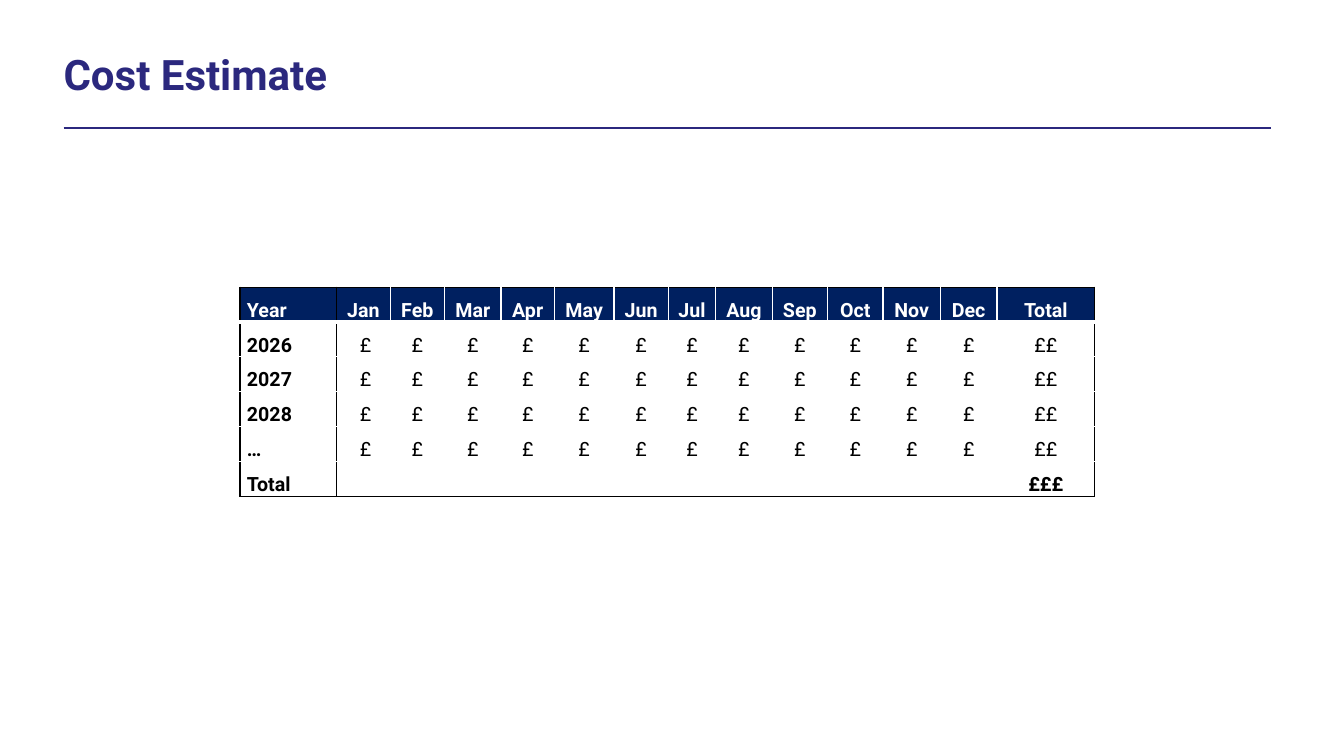
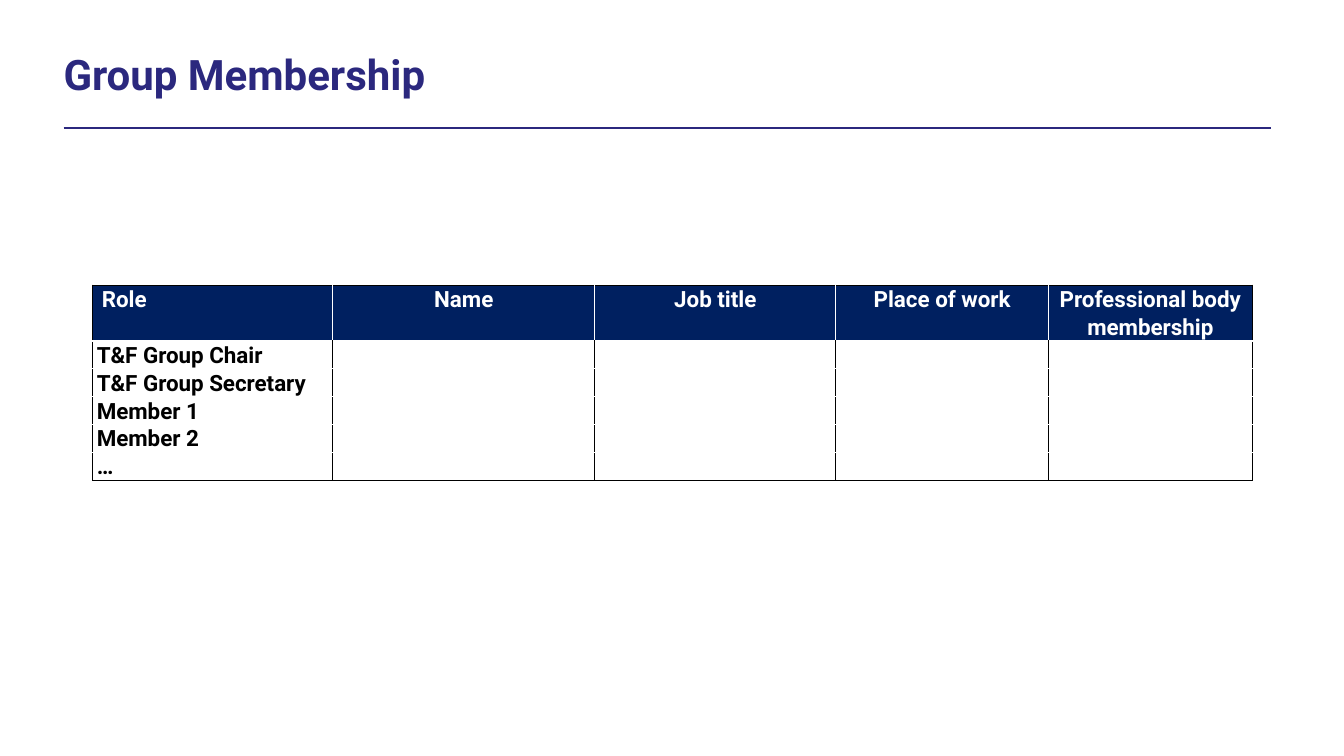
from lxml.etree import SubElement
from pptx import Presentation
from pptx.dml.color import RGBColor
from pptx.enum.shapes import MSO_CONNECTOR
from pptx.enum.text import MSO_ANCHOR as ANCHOR, MSO_AUTO_SIZE, PP_ALIGN as ALIGN
from pptx.oxml.ns import qn
from pptx.util import Pt

PX = 9144  # EMU in one px, 100 px to the inch
FONT = "Roboto"
PURPLE, NAVY, WHITE, BLACK = "2B287E", "002060", "FFFFFF", "000000"
LEFT, WIDTH = 63, 1198


def color(value):
    return RGBColor.from_string(value)


def write(frame, text, size, ink=BLACK, bold=True, align=ALIGN.LEFT, spacing=1.0, after=0):
    para = frame.paragraphs[0]
    para.alignment = align
    para.line_spacing = spacing
    para.space_after = Pt(after)
    if not text:
        # An empty cell still needs a size, or its row grows
        SubElement(para._p, qn("a:endParaRPr"), sz=str(size * 100))
        return
    span = para.add_run()
    span.text = text
    span.font.name = FONT
    span.font.size = Pt(size)
    span.font.bold = bold
    span.font.color.rgb = color(ink)


# Content: dark_edges are the column edges drawn black, in header and body
months = "Jan Feb Mar Apr May Jun Jul Aug Sep Oct Nov Dec".split()
cost_rows = [["Year", *months, "Total"]]
cost_rows += [[year] + ["£"] * 12 + ["££"] for year in ("2026", "2027", "2028", "…")]
cost_rows += [["Total"] + [""] * 12 + ["£££"]]
roles = ["T&F Group Chair", "T&F Group Secretary", "Member 1", "Member 2", "…"]
member_rows = [["Role", "Name", "Job title", "Place of work", "Professional body membership"]]
member_rows += [[role] + [""] * 4 for role in roles]

pages = [
    dict(title="Cost Estimate", rows=cost_rows, left=238, top=285,
         widths=[96, 53, 54, 56, 53, 59, 54, 47, 56, 55, 55, 57, 56, 97],
         heights=[34] * 6, size=14, spacing=1.5, after=8, margin=7,
         indents={(row, 1): 4 for row in range(1, 5)}, anchor=ANCHOR.MIDDLE,
         header_line=3, dark_edges=[{0, 1, 14}, {0, 1, 14}]),
    dict(title="Group Membership", rows=member_rows, left=92, top=283,
         widths=[238, 260, 239, 211, 202],
         heights=[55] + [27] * 5, size=16, spacing=1.07, after=4, margin=4,
         indents={(0, 0): 5}, anchor=ANCHOR.TOP,
         header_line=1, dark_edges=[{0, 5}, set(range(6))]),
]

deck = Presentation()
deck.slide_width, deck.slide_height = 1333 * PX, 750 * PX
layout = deck.slide_layouts[5]

# Shared title place
title = layout.placeholders[0]
title.left, title.top, title.width, title.height = (
    n * PX for n in (LEFT, 54, WIDTH, 63))

for number, page in enumerate(pages):
    slide = deck.slides.add_slide(layout)

    # Shared rule under the title, kept in the layout
    if number == 0:
        rule = slide.shapes.add_connector(
            MSO_CONNECTOR.STRAIGHT, LEFT * PX, 127 * PX, (LEFT + WIDTH) * PX, 127 * PX)
        rule.line.color.rgb = color(PURPLE)
        rule.line.width = Pt(1.5)
        SubElement(rule.element.spPr, qn("a:effectLst"))
        layout.shapes.element.append(rule.element)

    # Title
    frame = slide.shapes.title.text_frame
    frame.margin_left = frame.margin_top = frame.margin_right = frame.margin_bottom = 0
    frame.vertical_anchor = ANCHOR.TOP
    frame.auto_size = MSO_AUTO_SIZE.NONE
    write(frame, page["title"], 30, ink=PURPLE, spacing=0.9)

    # Table grid
    rows, widths, heights = page["rows"], page["widths"], page["heights"]
    table = slide.shapes.add_table(
        len(rows), len(widths), page["left"] * PX, page["top"] * PX,
        sum(widths) * PX, sum(heights) * PX).table
    table.first_row = table.horz_banding = False
    for column, width in zip(table.columns, widths):
        column.width = width * PX
    for line, height in zip(table.rows, heights):
        line.height = height * PX

    # Cells
    for r, row in enumerate(rows):
        header, last = r == 0, r == len(rows) - 1
        dark = page["dark_edges"][0 if header else 1]
        for c, text in enumerate(row):
            cell = table.cell(r, c)
            cell.margin_left = (page["margin"] + page["indents"].get((r, c), 0)) * PX
            cell.margin_right = page["margin"] * PX
            cell.margin_top = cell.margin_bottom = 0
            cell.vertical_anchor = page["anchor"]
            write(cell.text_frame, text, page["size"],
                  ink=WHITE if header else BLACK,
                  bold=header or c == 0 or last,
                  align=ALIGN.CENTER if c else ALIGN.LEFT,
                  spacing=page["spacing"], after=page["after"])

            # Borders come before the fill in the cell properties
            borders = [("L", c in dark, 1), ("R", c + 1 in dark, 1), ("T", header, 1),
                       ("B", last, page["header_line"] if header else 1)]
            for side, black, points in borders:
                edge = SubElement(cell._tc.get_or_add_tcPr(), qn("a:ln" + side),
                                  w=str(Pt(points)))
                paint = SubElement(edge, qn("a:solidFill"))
                SubElement(paint, qn("a:srgbClr"), val=BLACK if black else WHITE)
            if header:
                cell.fill.solid()
                cell.fill.fore_color.rgb = color(NAVY)
            else:
                cell.fill.background()

deck.save("out.pptx")
